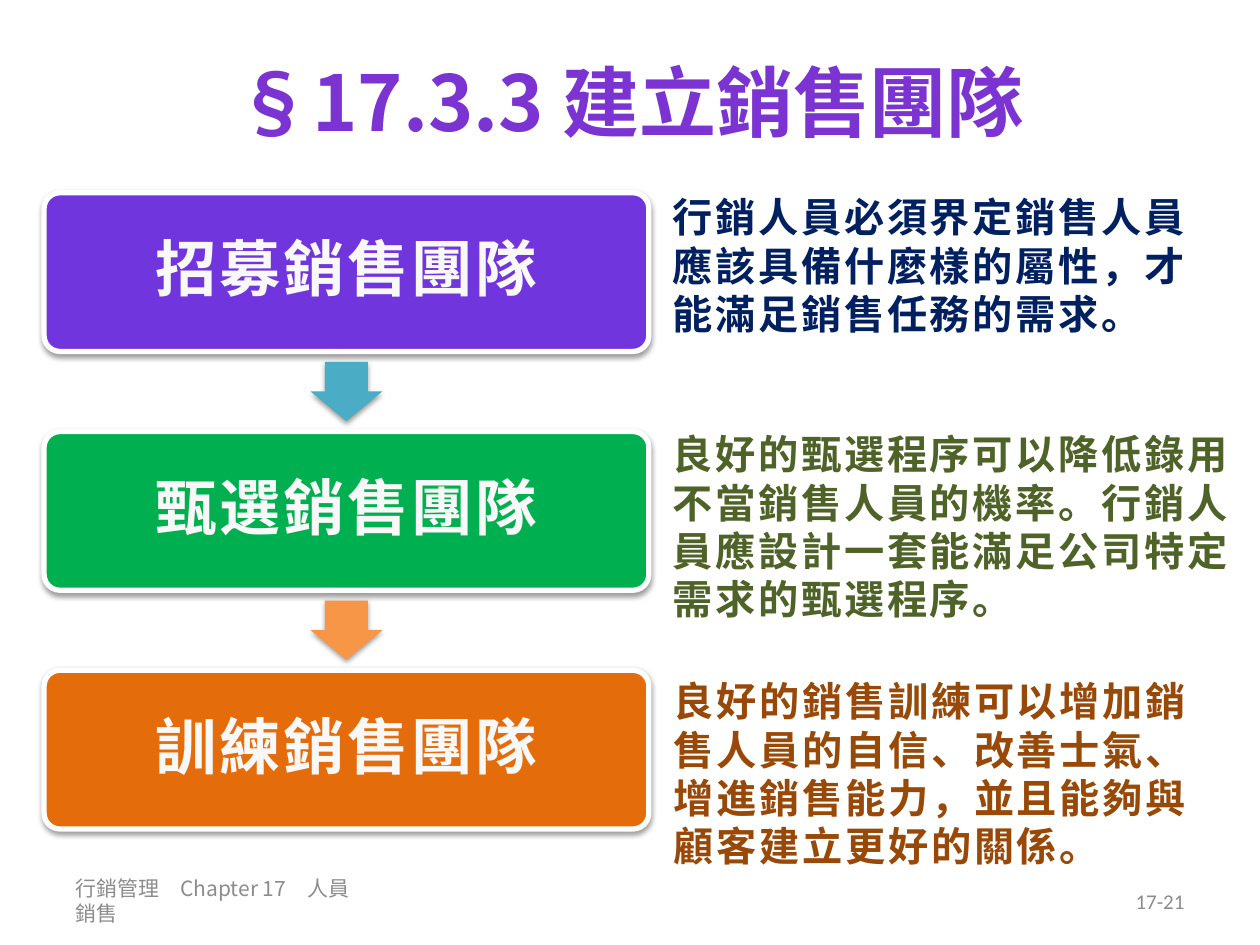
from lxml.etree import SubElement
from pptx import Presentation
from pptx.dml.color import RGBColor
from pptx.enum.shapes import MSO_SHAPE as Shape
from pptx.enum.text import MSO_ANCHOR as Anchor, PP_ALIGN as Align
from pptx.oxml.ns import qn
from pptx.util import Inches, Pt

TITLE = "§17.3.3 建立銷售團隊"
FOOTER = "行銷管理　Chapter 17　人員銷售"
PAGE = "17-21"
STEPS = [
    dict(label="招募銷售團隊", fill="7135DD", ink="002060", arrow="4BACC6",
         detail="行銷人員必須界定銷售人員應該具備什麼樣的屬性，才能滿足銷售任務的需求。",
         detail_box=(5.24, 1.48, 4.57, 1.26)),
    dict(label="甄選銷售團隊", fill="00B050", ink="4F6228", arrow="F79646",
         detail="良好的甄選程序可以降低錄用不當銷售人員的機率。行銷人員應設計一套能滿足公司特定需求的甄選程序。",
         detail_box=(5.24, 3.36, 4.72, 1.65)),
    dict(label="訓練銷售團隊", fill="E46C0A", ink="984807", arrow=None,
         detail="良好的銷售訓練可以增加銷售人員的自信、改善士氣、增進銷售能力，並且能夠與顧客建立更好的關係。",
         detail_box=(5.25, 5.32, 4.55, 1.65)),
]
THEME = dict(
    latin="Calibri", asian="Noto Sans CJK SC",
    title="7B34D2", label="F8F8F8", border="FFFFFF", muted="8C8C8C", shadow="000000",
    title_size=44, label_size=35, detail_size=23, footer_size=12,
)
CARD_LEFT, CARD_TOP, CARD_W, CARD_H = 0.35, 1.53, 4.8, 1.26
CARD_PITCH = 1.895
ARROW_W, ARROW_H = 0.57, 0.47


def write(host, text, size, color, font=THEME["latin"], bold=False, align=Align.LEFT,
          anchor=Anchor.TOP, spacing=0, inset=None, line_spacing=None, space_after=None):
    frame = host.text_frame
    frame.word_wrap = True
    frame.vertical_anchor = anchor
    if inset is not None:
        frame.margin_left = frame.margin_right = Inches(inset)
        frame.margin_top = frame.margin_bottom = Inches(inset)
    paragraph = frame.paragraphs[0]
    paragraph.alignment = align
    if line_spacing:
        paragraph.line_spacing = line_spacing
    if space_after:
        paragraph.space_after = Pt(space_after)
    run = paragraph.add_run()
    run.text = text
    run.font.size, run.font.bold, run.font.name = Pt(size), bold, font
    run.font.color.rgb = RGBColor.from_string(color)
    properties = run.font._element
    if spacing:
        properties.set("spc", str(int(spacing * 100)))
    SubElement(properties, qn("a:ea")).set("typeface", THEME["asian"])


def add_text(slide, box, text, **style):
    write(slide.shapes.add_textbox(*map(Inches, box)), text, **style)


def add_block(slide, kind, box, fill, adjustments, border=None):
    block = slide.shapes.add_shape(kind, *map(Inches, box))
    for index, value in enumerate(adjustments):
        block.adjustments[index] = value
    block.fill.solid()
    block.fill.fore_color.rgb = RGBColor.from_string(fill)
    if border:
        block.line.color.rgb = RGBColor.from_string(border)
        block.line.width = Pt(3)
    else:
        block.line.fill.background()
    block.shadow.inherit = False
    effects = block._element.spPr.find(qn("a:effectLst"))
    shadow = SubElement(effects, qn("a:outerShdw"), blurRad=str(Pt(3.1)),
                        dist=str(Pt(1.6)), dir="5400000", rotWithShape="0")
    tint = SubElement(shadow, qn("a:srgbClr"), val=THEME["shadow"])
    SubElement(tint, qn("a:alpha"), val="38000")
    return block


def main():
    deck = Presentation()
    deck.slide_width, deck.slide_height = Inches(10), Inches(7.5)
    slide = deck.slides.add_slide(deck.slide_layouts[5])

    title = slide.shapes.title
    title.left, title.top, title.width, title.height = map(Inches, (0.5, 0.13, 9, 1.34))
    write(title, TITLE, size=THEME["title_size"], color=THEME["title"], font=THEME["asian"],
          bold=True, align=Align.CENTER, anchor=Anchor.MIDDLE)

    for index, step in enumerate(STEPS):
        top = CARD_TOP + index * CARD_PITCH
        card = add_block(slide, Shape.ROUNDED_RECTANGLE, (CARD_LEFT, top, CARD_W, CARD_H),
                         step["fill"], [0.1], border=THEME["border"])
        write(card, step["label"], size=THEME["label_size"], color=THEME["label"], bold=True,
              align=Align.CENTER, anchor=Anchor.MIDDLE, spacing=1.5, inset=0.15,
              line_spacing=0.9, space_after=12)
        if step["arrow"]:
            arrow_left = CARD_LEFT + (CARD_W - ARROW_W) / 2
            arrow_top = top + (CARD_H + CARD_PITCH - ARROW_H) / 2
            add_block(slide, Shape.DOWN_ARROW, (arrow_left, arrow_top, ARROW_W, ARROW_H),
                      step["arrow"], [0.6, 0.5])
        add_text(slide, step["detail_box"], step["detail"], size=THEME["detail_size"],
                 color=step["ink"], bold=True, spacing=1.5)

    small = dict(size=THEME["footer_size"], color=THEME["muted"], anchor=Anchor.MIDDLE)
    add_text(slide, (0.5, 6.95, 2.45, 0.4), FOOTER, font=THEME["asian"], **small)
    add_text(slide, (7.17, 6.95, 2.33, 0.4), PAGE, align=Align.RIGHT, **small)
    deck.save("out.pptx")


if __name__ == "__main__":
    main()
